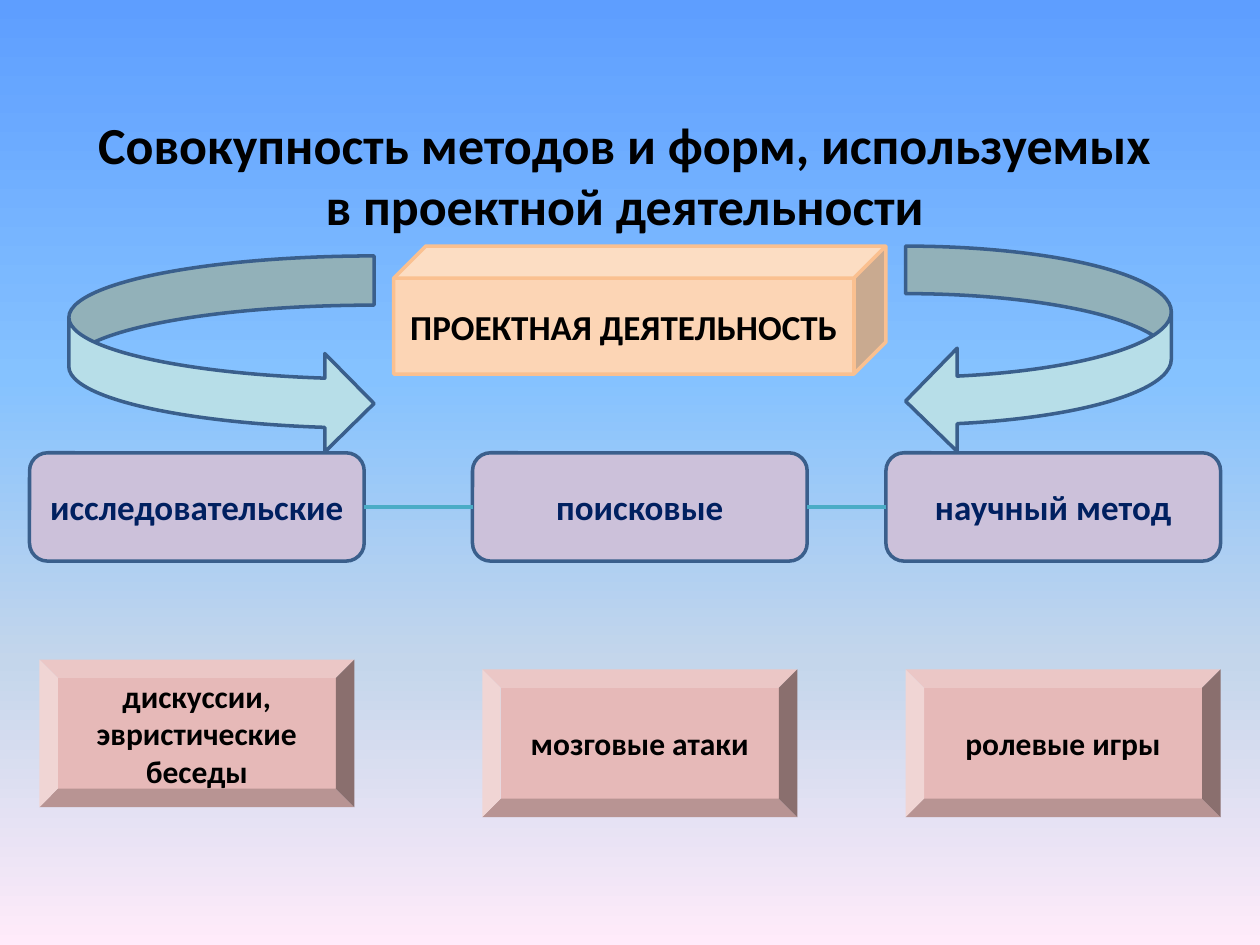
from copy import deepcopy
from lxml import etree
from pptx import Presentation
from pptx.dml.color import RGBColor
from pptx.enum.shapes import MSO_CONNECTOR, MSO_SHAPE
from pptx.enum.text import MSO_ANCHOR, PP_ALIGN
from pptx.oxml.ns import qn
from pptx.util import Inches, Pt

ROUND = MSO_SHAPE.ROUNDED_RECTANGLE
BEVEL = MSO_SHAPE.BEVEL
CUBE = MSO_SHAPE.CUBE
CURVE = MSO_SHAPE.CURVED_RIGHT_ARROW
LINE = MSO_CONNECTOR.STRAIGHT
CENTER = PP_ALIGN.CENTER
MIDDLE = MSO_ANCHOR.MIDDLE
BOTTOM = MSO_ANCHOR.BOTTOM

BLACK = RGBColor(0x00, 0x00, 0x00)
NAVY = RGBColor(0x00, 0x20, 0x60)
BLUE = RGBColor(0x3A, 0x5F, 0x8C)
TEAL = RGBColor(0x4B, 0xAC, 0xC6)
AQUA = RGBColor(0xB7, 0xDE, 0xE8)
LILAC = RGBColor(0xCC, 0xC1, 0xDA)
ROSE = RGBColor(0xE6, 0xB9, 0xB8)
PEACH = RGBColor(0xFC, 0xD5, 0xB5)
ORANGE = RGBColor(0xFA, 0xC0, 0x90)
SKY = [
    (0, RGBColor(0x5E, 0x9E, 0xFF)),
    (0.4, RGBColor(0x85, 0xC2, 0xFF)),
    (0.7, RGBColor(0xC4, 0xD6, 0xEB)),
    (1, RGBColor(0xFF, 0xEB, 0xFA)),
]


class Board:
    font = "Calibri"
    stroke = Pt(2)
    cols = 128

    def __init__(self, deck):
        self.unit = deck.slide_width / self.cols
        self.slide = deck.slides.add_slide(deck.slide_layouts[6])

    def grid(self, *cells):
        return [round(cell * self.unit) for cell in cells]

    def back(self, stops):
        fill = self.slide.background.fill
        fill.gradient()
        fill.gradient_angle = 270
        group = next(self.slide.element.iter(qn("a:gsLst")))
        while len(group) < len(stops):
            group.append(deepcopy(group[0]))
        for stop, (place, color) in zip(fill.gradient_stops, stops):
            stop.position = place
            stop.color.rgb = color

    def label(self, shape, text, size, color, anchor=MIDDLE):
        frame = shape.text_frame
        frame.word_wrap = True
        frame.vertical_anchor = anchor
        frame.text = text
        for para in frame.paragraphs:
            para.alignment = CENTER
            para.font.name = self.font
            para.font.size = Pt(size)
            para.font.bold = True
            para.font.color.rgb = color
        return frame

    def title(self, text, *cells):
        box = self.slide.shapes.add_textbox(*self.grid(*cells))
        frame = self.label(box, text, 29.7, BLACK, BOTTOM)
        frame.margin_bottom = 0
        frame.paragraphs[0].line_spacing = Pt(35)

    def shape(self, kind, cells, fill, edge=None):
        shape = self.slide.shapes.add_shape(kind, *self.grid(*cells))
        shape.shadow.inherit = False
        shape.fill.solid()
        shape.fill.fore_color.rgb = fill
        if edge is None:
            shape.line.fill.background()
        else:
            shape.line.color.rgb = edge
            shape.line.width = self.stroke
        return shape

    def block(self, kind, cells, text, size, color, fill, edge=None):
        self.label(self.shape(kind, cells, fill, edge), text, size, color)

    def arrow(self, cells, bend, flip=False):
        shape = self.shape(CURVE, cells, AQUA, BLUE)
        for index, value in enumerate((bend, 0.5, 0.25)):
            shape.adjustments[index] = value
        if flip:
            shape.element.spPr.get_or_add_xfrm().set("flipH", "1")

    def link(self, start, end, row):
        line = self.slide.shapes.add_connector(
            LINE, *self.grid(start, row, end, row))
        line.line.color.rgb = TEAL
        line.line.width = self.stroke
        etree.SubElement(line.element.spPr, qn("a:effectLst"))


def main():
    deck = Presentation()
    deck.slide_width = Inches(10)
    deck.slide_height = Inches(7.5)
    board = Board(deck)
    board.back(SKY)
    board.title("Совокупность методов и форм, используемых "
                "в проектной деятельности", 7, 5, 113, 19)

    board.arrow((92, 25, 27, 21), 0.23, flip=True)
    board.block(CUBE, (40, 25, 50, 13), "ПРОЕКТНАЯ ДЕЯТЕЛЬНОСТЬ",
                20, BLACK, PEACH, ORANGE)

    wide, high, top = 34, 11, 46
    lefts = (3, 48, 90)
    names = ("исследовательские", "поисковые", "научный метод")
    for left, name in zip(lefts, names):
        board.block(ROUND, (left, top, wide, high), name,
                    20, NAVY, LILAC, BLUE)
    board.arrow((7, 26, 31, 20), 0.25)
    for left, right in zip(lefts, lefts[1:]):
        board.link(left + wide, right, top + high / 2)

    forms = (
        (4, 67, "дискуссии,\nэвристические беседы"),
        (49, 68, "мозговые атаки"),
        (92, 68, "ролевые игры"),
    )
    for left, row, name in forms:
        board.block(BEVEL, (left, row, 32, 15), name, 18, BLACK, ROSE)

    deck.save("out.pptx")


if __name__ == "__main__":
    main()
